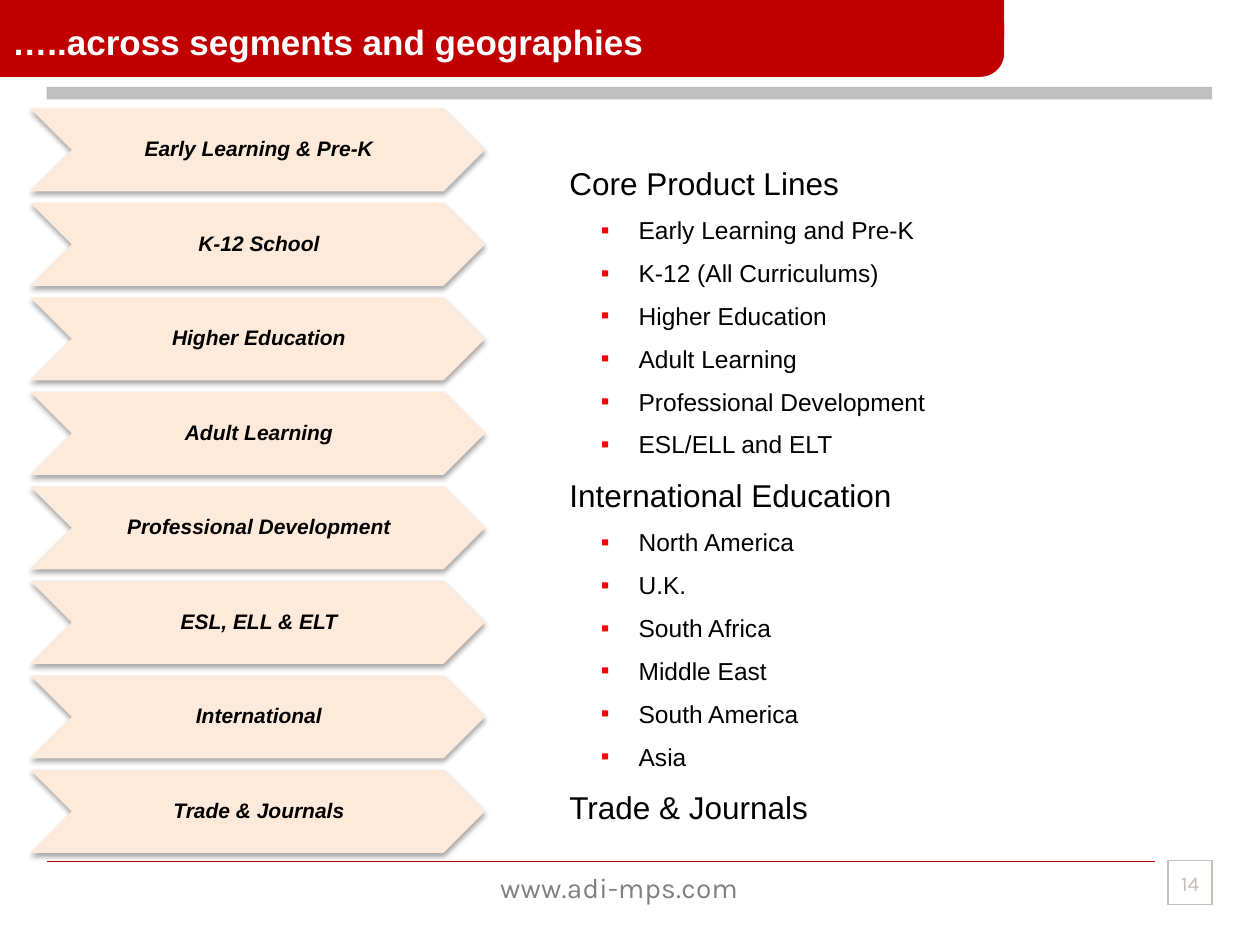
"""Build the slide on product segments and geographies."""
from lxml import etree
from pptx import Presentation
from pptx.dml.color import RGBColor
from pptx.enum.shapes import MSO_CONNECTOR, MSO_SHAPE
from pptx.enum.text import MSO_ANCHOR, PP_ALIGN
from pptx.oxml.ns import qn
from pptx.util import Inches, Pt

RECT, ROUNDED, CHEVRON = MSO_SHAPE.RECTANGLE, MSO_SHAPE.ROUNDED_RECTANGLE, MSO_SHAPE.CHEVRON
STRAIGHT = MSO_CONNECTOR.STRAIGHT
LEFT, CENTER = PP_ALIGN.LEFT, PP_ALIGN.CENTER
TOP, MIDDLE = MSO_ANCHOR.TOP, MSO_ANCHOR.MIDDLE

THEME = {
    "red": "C00000", "gray": "BFBFBF", "peach": "FDEADA", "ink": "000000",
    "white": "FFFFFF", "bullet": "FF0000", "footer": "808080", "page": "C6BFB9",
    "body_font": "Arial", "footer_font": "Karla",
    "title_size": 20, "heading_size": 18, "site_size": 16, "item_size": 14, "label_size": 12,
}

deck = Presentation()
deck.slide_width, deck.slide_height = Inches(10), Inches(7.5)
COL, ROW = deck.slide_width / 1000, deck.slide_height / 750
slide = deck.slides.add_slide(deck.slide_layouts[6])


def color(name):
    return RGBColor.from_string(THEME[name])


def write(frame, text, *, size, ink="ink", face="body_font", bold=False, italic=False,
          align=LEFT, anchor=TOP, insets=None, spacing=None, before=None,
          bulleted=False, tracking=None):
    frame.word_wrap = True
    frame.vertical_anchor = anchor
    if insets is not None:
        frame.margin_left, frame.margin_top, frame.margin_right, frame.margin_bottom = (
            Inches(inset) for inset in insets)
    paragraph = frame.add_paragraph() if frame.text else frame.paragraphs[0]
    paragraph.alignment = align
    if spacing:
        paragraph.line_spacing = spacing
    if before:
        paragraph.space_before = Pt(before)
    if bulleted:
        properties = paragraph._p.get_or_add_pPr()
        properties.set("marL", str(Inches(0.55)))
        properties.set("indent", str(Inches(-0.3)))
        bullet_color = etree.SubElement(properties, qn("a:buClr"))
        etree.SubElement(bullet_color, qn("a:srgbClr"), val=THEME["bullet"])
        etree.SubElement(properties, qn("a:buFont"), typeface=THEME["body_font"])
        etree.SubElement(properties, qn("a:buChar"), char="▪")
    run = paragraph.add_run()
    run.text = text
    run.font.name, run.font.size = THEME[face], Pt(THEME[size])
    run.font.bold, run.font.italic = bold, italic
    run.font.color.rgb = color(ink)
    if tracking:
        run.font._element.set("spc", str(tracking))


def place(kind, left, top, width, height, fill=None):
    box = (round(left * COL), round(top * ROW), round(width * COL), round(height * ROW))
    if kind is None:
        return slide.shapes.add_textbox(*box)
    shape = slide.shapes.add_shape(kind, *box)
    shape.shadow.inherit = False
    shape.line.fill.background()
    if fill:
        shape.fill.solid()
        shape.fill.fore_color.rgb = color(fill)
    else:
        shape.fill.background()
    return shape


page_number = place(RECT, 927, 683, 35, 35)
page_number.line.color.rgb = color("page")
page_number.line.width = Pt(0.75)
write(page_number.text_frame, "14", size="label_size", ink="page", face="footer_font",
      align=CENTER, anchor=MIDDLE, insets=(0, 0, 0, 0))

website = place(None, 61, 686, 861, 37)
write(website.text_frame, "www.adi-mps.com", size="site_size", ink="footer",
      face="footer_font", align=CENTER, tracking=20)

footer_rule = slide.shapes.add_connector(
    STRAIGHT, round(37 * COL), round(684 * ROW), round(917 * COL), round(684 * ROW))
footer_rule.line.color.rgb = color("red")
footer_rule.line.width = Pt(0.75)
etree.SubElement(footer_rule._element.spPr, qn("a:effectLst"))

place(RECT, 37, 69, 925, 10, "gray")
place(RECT, 0, 0, 231, 61, "red")
place(RECT, 566, 0, 231, 30, "red")
banner = place(ROUNDED, 0, 0, 797, 61, "red")
banner.adjustments[0] = 0.31

OFFERINGS = [
    ("Core Product Lines", ["Early Learning and Pre-K", "K-12 (All Curriculums)",
                            "Higher Education", "Adult Learning",
                            "Professional Development", "ESL/ELL and ELT"]),
    ("International Education", ["North America", "U.K.", "South Africa",
                                 "Middle East", "South America", "Asia"]),
    ("Trade & Journals", []),
]
offering_list = place(None, 442, 113, 558, 583).text_frame
for heading, items in OFFERINGS:
    write(offering_list, heading, size="heading_size", spacing=1.4,
          before=1 if offering_list.text else None)
    for item in items:
        write(offering_list, item, size="item_size", spacing=1.4, before=1, bulleted=True)

SEGMENTS = ["Early Learning & Pre-K", "K-12 School", "Higher Education", "Adult Learning",
            "Professional Development", "ESL, ELL & ELT", "International", "Trade & Journals"]
SEGMENT_TOP, SEGMENT_PITCH = 86, 75
for index, segment in enumerate(SEGMENTS):
    arrow = place(CHEVRON, 24, SEGMENT_TOP + index * SEGMENT_PITCH, 361, 66, "peach")
    shadow = etree.SubElement(
        arrow._element.spPr.find(qn("a:effectLst")), qn("a:outerShdw"),
        blurRad=str(Pt(3.1)), dist=str(Pt(1.8)), dir="5400000", rotWithShape="0")
    shadow_color = etree.SubElement(shadow, qn("a:srgbClr"), val=THEME["ink"])
    etree.SubElement(shadow_color, qn("a:alpha"), val="35000")
    write(arrow.text_frame, segment, size="label_size", bold=True, italic=True,
          align=CENTER, anchor=MIDDLE, insets=(0.02, 0.01, 0, 0.01), spacing=0.9)

title = place(None, 0, 11, 803, 44)
write(title.text_frame, "…..across segments and geographies", size="title_size",
      ink="white", bold=True)

deck.save("out.pptx")
